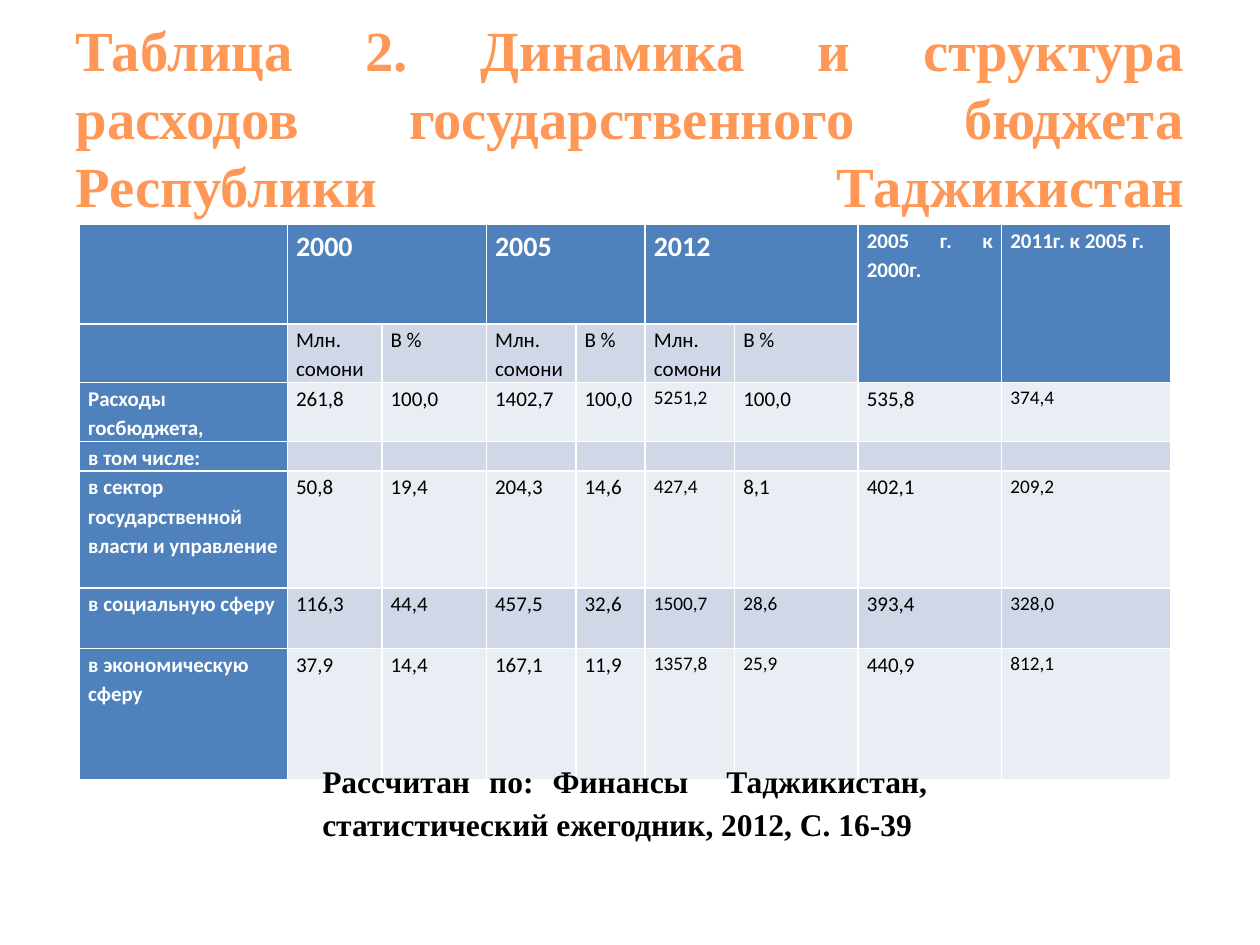
from lxml import etree
from pptx import Presentation
from pptx import util as u
from pptx.dml.color import RGBColor
from pptx.enum import text as t
from pptx.oxml.ns import qn

WHITE = RGBColor(0xFF, 0xFF, 0xFF)
BLACK = RGBColor(0x00, 0x00, 0x00)
ORANGE = RGBColor(0xFF, 0x98, 0x56)
HEADER_BLUE = RGBColor(0x4F, 0x81, 0xBD)
BANDS = (RGBColor(0xE9, 0xED, 0xF4), RGBColor(0xD0, 0xD8, 0xE8))

COLUMNS = (1.65, 0.75, 0.83, 0.71, 0.55, 0.71, 0.98, 1.14, 1.34)
ROWS = (0.79, 0.46, 0.46, 0.23, 0.93, 0.48, 1.04)
SMALL_CELLS = {(2, 5), (2, 8), (4, 5), (4, 8), (5, 5), (5, 6), (5, 8),
               (6, 5), (6, 6), (6, 8)}
UNITS = ["Млн.\nсомони", "В %"]
BUDGET = [
    ["", "2000", "", "2005", "", "2012", "", "2005 г. к 2000г.", "2011г. к 2005 г."],
    [""] + UNITS * 3 + ["", ""],
    ["Расходы госбюджета,", "261,8", "100,0", "1402,7", "100,0", "5251,2", "100,0",
     "535,8", "374,4"],
    ["в том числе:"] + [""] * 8,
    ["в сектор государственной власти и управление", "50,8", "19,4", "204,3", "14,6",
     "427,4", "8,1", "402,1", "209,2"],
    ["в социальную сферу", "116,3", "44,4", "457,5", "32,6", "1500,7", "28,6",
     "393,4", "328,0"],
    ["в экономическую сферу", "37,9", "14,4", "167,1", "11,9", "1357,8", "25,9",
     "440,9", "812,1"],
]


def style_paragraph(paragraph, font_name, size, color, bold):
    font = paragraph.font
    font.name, font.size, font.bold = font_name, u.Pt(size), bold
    font.color.rgb = color


def place(shape, left, top, width, height):
    shape.left, shape.top = u.Inches(left), u.Inches(top)
    shape.width, shape.height = u.Inches(width), u.Inches(height)


def add_heading(slide):
    heading = slide.shapes.title
    place(heading, 0.5, 0.3, 9, 1.25)
    frame = heading.text_frame
    frame.vertical_anchor = t.MSO_ANCHOR.MIDDLE
    frame.auto_size = t.MSO_AUTO_SIZE.NONE
    frame.text = ("\vТаблица 2. Динамика и структура расходов "
                  "государственного бюджета Республики Таджикистан\v")
    paragraph = frame.paragraphs[0]
    paragraph.alignment = t.PP_ALIGN.JUSTIFY
    paragraph.space_after = u.Pt(10)
    style_paragraph(paragraph, "Times New Roman", 32.4, ORANGE, True)


def cell_size(row, column):
    if row == 0 and column < 7:
        return 16
    return 11 if (row, column) in SMALL_CELLS else 12


def fill_cell(cell, row, column, content):
    is_header = row == 0 or column == 0
    size = cell_size(row, column)
    cell.margin_left = cell.margin_right = u.Inches(0.07)
    cell.margin_top = cell.margin_bottom = 0
    cell.fill.solid()
    cell.fill.fore_color.rgb = HEADER_BLUE if is_header else BANDS[row % 2]
    cell.text = content
    for paragraph in cell.text_frame.paragraphs:
        paragraph.alignment = t.PP_ALIGN.JUSTIFY if column else t.PP_ALIGN.LEFT
        paragraph.line_spacing = 1.15
        style_paragraph(paragraph, "Calibri", size,
                        WHITE if is_header else BLACK, is_header)
        if not content:
            end = etree.SubElement(paragraph._p, qn("a:endParaRPr"))
            end.set("sz", str(size * 100))


def add_budget_table(slide):
    table = slide.shapes.add_table(
        len(ROWS), len(COLUMNS), u.Inches(0.63), u.Inches(1.78),
        u.Inches(sum(COLUMNS)), u.Inches(sum(ROWS))).table
    table.first_col = True
    for column, width in zip(table.columns, COLUMNS):
        column.width = u.Inches(width)
    for row, height in zip(table.rows, ROWS):
        row.height = u.Inches(height)
    for row, contents in enumerate(BUDGET):
        for column, content in enumerate(contents):
            fill_cell(table.cell(row, column), row, column, content)
    for column in (1, 3, 5):
        table.cell(0, column).merge(table.cell(0, column + 1))
    for column in (7, 8):
        table.cell(0, column).merge(table.cell(1, column))


def add_source_note(slide):
    note = slide.shapes.add_textbox(u.Inches(2.46), u.Inches(5.95),
                                    u.Inches(5), u.Inches(0.8))
    frame = note.text_frame
    frame.word_wrap = True
    frame.auto_size = t.MSO_AUTO_SIZE.SHAPE_TO_FIT_TEXT
    frame.text = ("Рассчитан по: Финансы  Таджикистан, "
                  "статистический ежегодник, 2012, С. 16-39")
    paragraph = frame.paragraphs[0]
    paragraph.alignment = t.PP_ALIGN.JUSTIFY
    paragraph.line_spacing = 1.15
    paragraph.space_after = u.Pt(10)
    style_paragraph(paragraph, "Times New Roman", 18, BLACK, True)


def main():
    presentation = Presentation()
    presentation.slide_width, presentation.slide_height = u.Inches(10), u.Inches(7.5)
    slide = presentation.slides.add_slide(presentation.slide_layouts[5])
    add_heading(slide)
    add_budget_table(slide)
    add_source_note(slide)
    presentation.save("out.pptx")


if __name__ == "__main__":
    main()
